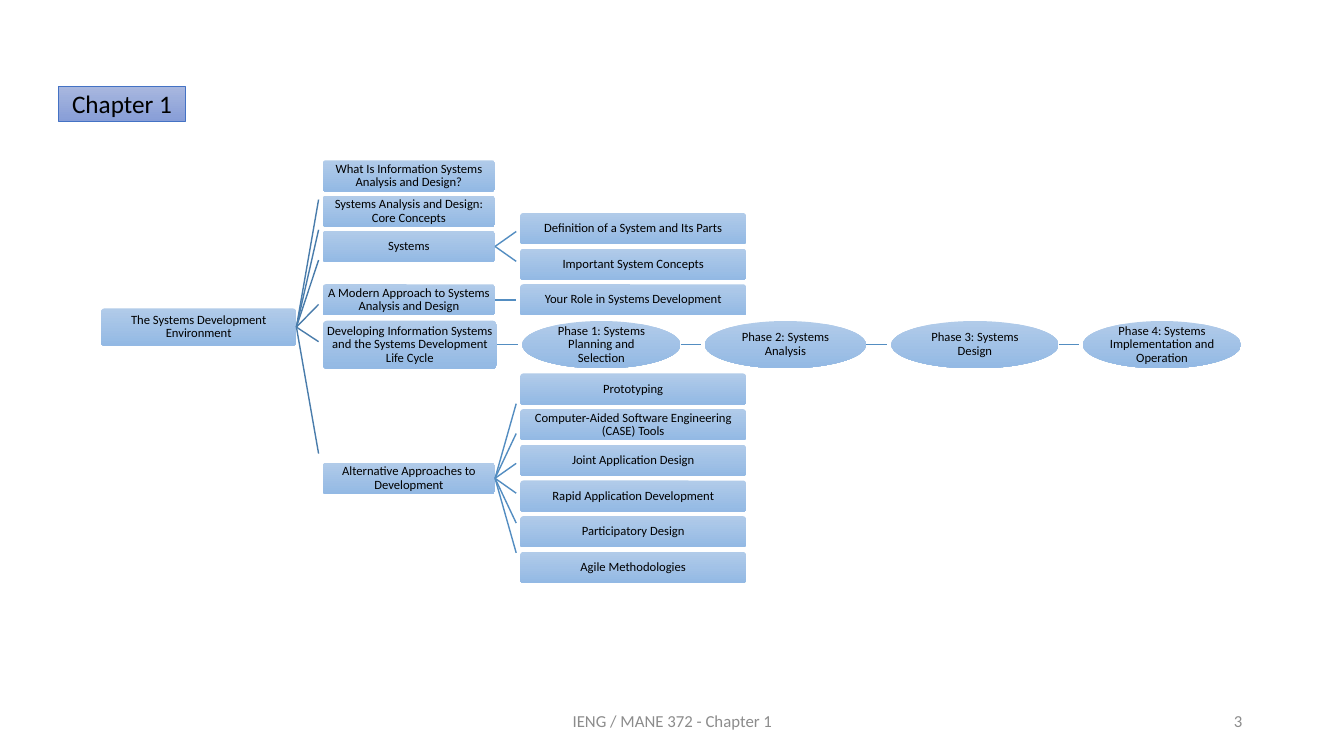
from lxml import etree
from pptx import Presentation
from pptx.dml.color import RGBColor
from pptx.enum.shapes import MSO_CONNECTOR, MSO_SHAPE
from pptx.enum.text import MSO_ANCHOR, MSO_AUTO_SIZE, PP_ALIGN
from pptx.oxml.ns import qn
from pptx.util import Inches, Pt

LINE = MSO_CONNECTOR.STRAIGHT
BOX, OVAL = MSO_SHAPE.ROUNDED_RECTANGLE, MSO_SHAPE.OVAL
CENTER, RIGHT = PP_ALIGN.CENTER, PP_ALIGN.RIGHT
MIDDLE, FIXED = MSO_ANCHOR.MIDDLE, MSO_AUTO_SIZE.NONE

COLORS = {
    "black": "000000", "gray": "8C8C8C",
    "light": "B1CBE9", "deep": "93B9E4",
    "main": "497CAB", "sub": "538DC1",
    "tab_top": "A8B7DF", "tab_low": "889ED7", "tab_edge": "4472C4",
}
FONT = "Calibri"
ROW, PITCH, FAN = 0.31, 0.354, 0.296
LEFT, GAP = 3.2, 0.04

TOPICS = [
    ("What Is Information Systems Analysis and Design?", 1.59, 1.98, []),
    ("Systems Analysis and Design: Core Concepts", 1.94, 2.28, []),
    ("Systems", 2.29, 2.58,
     ["Definition of a System and Its Parts", "Important System Concepts"]),
    ("A Modern Approach to Systems Analysis and Design", 2.82, 3.02,
     ["Your Role in Systems Development"]),
    ("Alternative Approaches to Development", 4.59, 4.5,
     ["Prototyping", "Computer-Aided Software Engineering (CASE) Tools",
      "Joint Application Design", "Rapid Application Development",
      "Participatory Design", "Agile Methodologies"]),
]
CYCLE = "Developing Information Systems and the Systems Development Life Cycle"
PHASES = [
    ("Phase 1: Systems Planning and Selection", 5.18, 1.57),
    ("Phase 2: Systems Analysis", 6.99, 1.6),
    ("Phase 3: Systems Design", 8.84, 1.66),
    ("Phase 4: Systems Implementation and Operation", 10.74, 1.57),
]


def rgb(name):
    """Return a named colour."""
    return RGBColor.from_string(COLORS[name])


def write(shape, text, size=9, color="black", align=CENTER, inset=0.01,
          space=1.0, wrap=True):
    """Put formatted text in a shape."""
    frame = shape.text_frame
    frame.text = text
    frame.auto_size, frame.word_wrap = FIXED, wrap
    frame.vertical_anchor = MIDDLE
    frame.margin_left = frame.margin_right = Inches(inset)
    frame.margin_top = frame.margin_bottom = Inches(0.01)
    para = frame.paragraphs[0]
    para.alignment, para.line_spacing = align, space
    para.font.name, para.font.size = FONT, Pt(size)
    para.font.color.rgb = rgb(color)


def shade(shape, top, low):
    """Fill a shape with a downward gradient."""
    shape.fill.gradient()
    shape.fill.gradient_angle = 270
    for stop, name in zip(shape.fill.gradient_stops, (top, low)):
        stop.color.rgb = rgb(name)


def add_node(slide, text, x, y, w, h=ROW, kind=BOX):
    """Draw a map node."""
    node = slide.shapes.add_shape(kind, Inches(x), Inches(y), Inches(w), Inches(h))
    if kind == BOX:
        node.adjustments[0] = 0.1
    node.shadow.inherit = False
    shade(node, "light", "deep")
    node.line.fill.background()
    write(node, text, space=0.9)
    return node


def add_link(slide, start, end, color, source=None):
    """Draw a line, joined to the right side of a source box."""
    link = slide.shapes.add_connector(
        LINE, *[Inches(v) for v in (*start, *end)])
    if source is not None:
        link.begin_connect(source, 3)
    link.line.color.rgb, link.line.width = rgb(color), Pt(1)
    etree.SubElement(link.element.spPr, qn("a:effectLst"))


def add_topic(slide, text, y, items):
    """Draw a topic with its subtopics fanned around its middle."""
    topic = add_node(slide, text, LEFT, y, 1.71)
    mid = y + ROW / 2
    for i, item in enumerate(items):
        shift = i - (len(items) - 1) / 2
        add_link(slide, (4.91, mid), (5.12, mid + FAN * shift), "sub", topic)
        add_node(slide, item, 5.16, mid + PITCH * shift - ROW / 2, 2.24)


def add_cycle(slide):
    """Draw the life cycle topic and its chain of phases."""
    mid = 3.42
    box = add_node(slide, CYCLE, LEFT, 3.18, 1.73, 0.48)
    edge = LEFT + 1.73
    for text, x, w in PHASES:
        add_link(slide, (edge, mid), (x - GAP, mid), "sub", box)
        add_node(slide, text, x, mid - 0.235, w, 0.47, OVAL)
        box, edge = None, x + w


def add_title(slide):
    """Shape the title as a chapter tab."""
    title = slide.shapes.title
    title.left, title.top = Inches(0.58), Inches(0.86)
    title.width, title.height = Inches(1.26), Inches(0.34)
    geom = etree.SubElement(title.element.spPr, qn("a:prstGeom"))
    geom.set("prst", "round2DiagRect")
    etree.SubElement(geom, qn("a:avLst"))
    shade(title, "tab_top", "tab_low")
    title.line.color.rgb, title.line.width = rgb("tab_edge"), Pt(0.5)
    write(title, "Chapter 1", size=18, wrap=False)


def add_note(slide, text, x, w, align):
    """Write a gray footer text."""
    box = slide.shapes.add_textbox(Inches(x), Inches(6.95), Inches(w), Inches(0.4))
    write(box, text, size=12, color="gray", align=align, inset=0.1)


def main():
    """Build and save the slide."""
    deck = Presentation()
    deck.slide_width, deck.slide_height = Inches(13.33), Inches(7.5)
    slide = deck.slides.add_slide(deck.slide_layouts[5])
    add_title(slide)
    root = add_node(slide, "The Systems Development Environment", 1, 3.06, 1.94, 0.37)
    ends = [end for _, _, end, _ in TOPICS] + [3.39]
    for end in ends:
        add_link(slide, (2.94, 3.24), (LEFT - GAP, end), "main", root)
    for text, y, _, items in TOPICS:
        add_topic(slide, text, y, items)
    add_cycle(slide)
    add_note(slide, "IENG / MANE 372 - Chapter 1", 4.42, 4.5, CENTER)
    add_note(slide, "3", 9.42, 3, RIGHT)
    deck.save("out.pptx")


if __name__ == "__main__":
    main()
